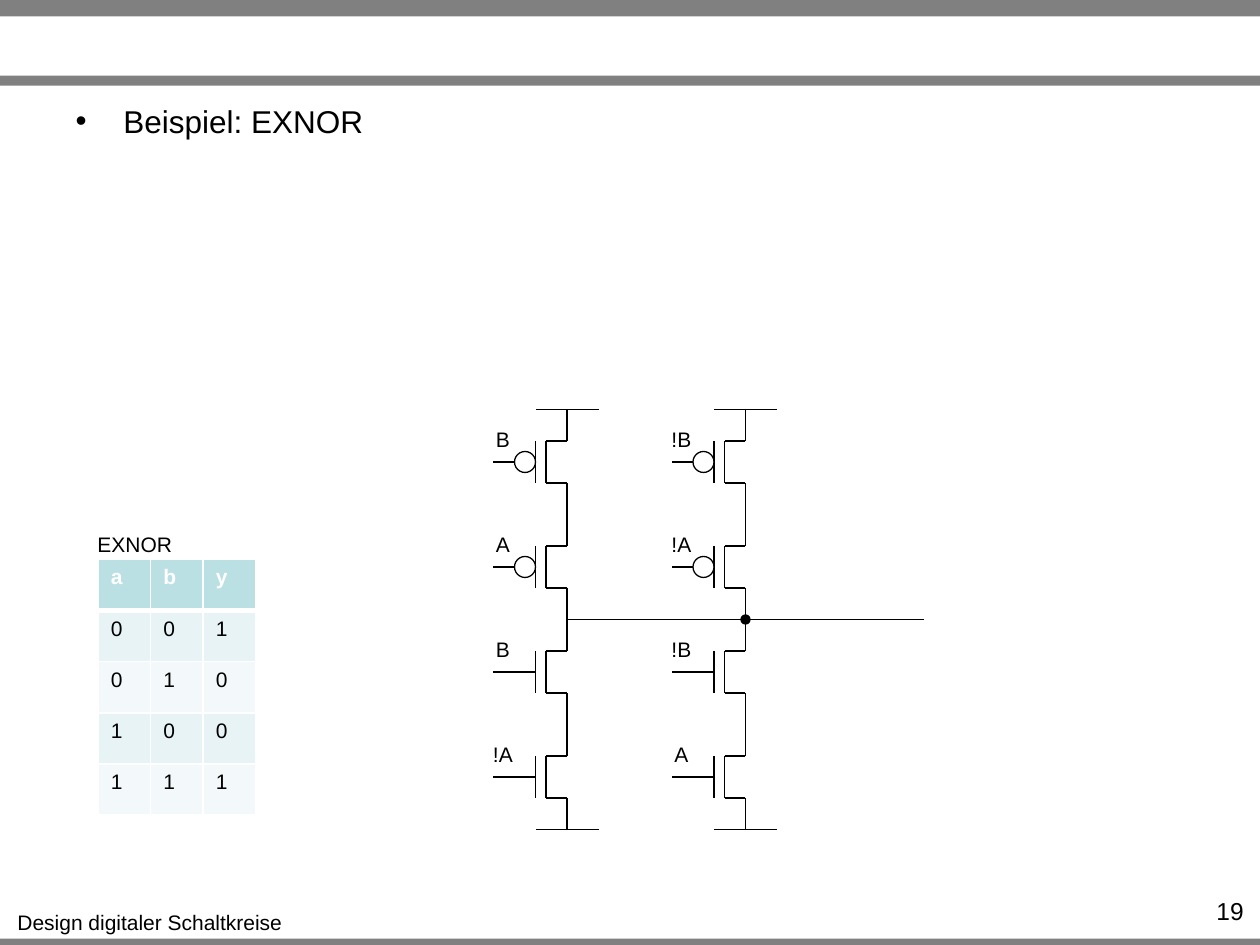
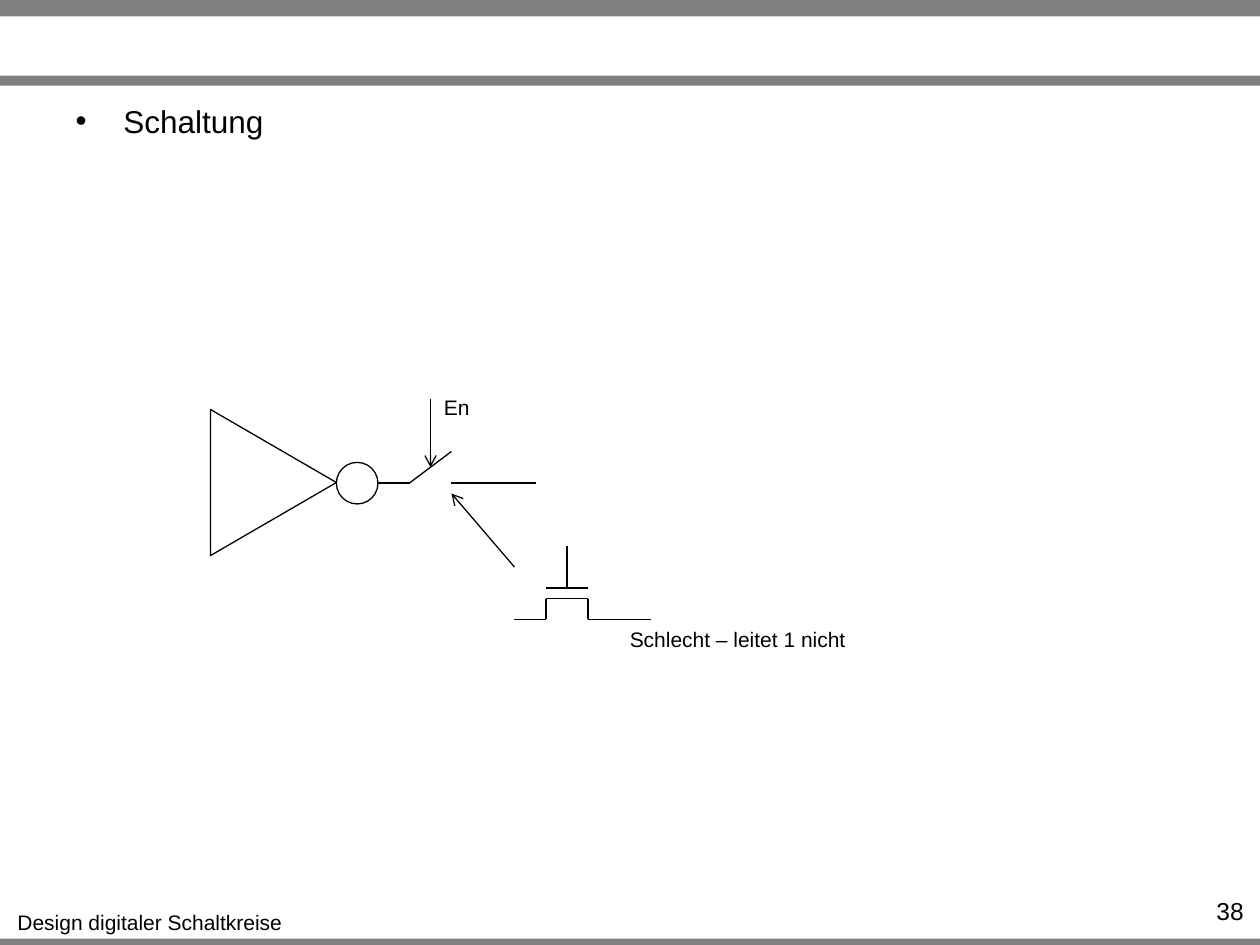
from lxml.etree import SubElement
from pptx import Presentation
from pptx.dml.color import RGBColor
from pptx.enum.shapes import MSO_CONNECTOR, MSO_SHAPE
from pptx.enum.text import MSO_ANCHOR, PP_ALIGN
from pptx.oxml.ns import qn
from pptx.util import Inches, Pt

COLOURS = {"ink": "000000", "paper": "FFFFFF", "band": "808080",
           "head": "BBE0E3", "odd": "E7F3F4", "even": "F3F9FA"}
RGB = {name: RGBColor.from_string(value) for name, value in COLOURS.items()}
BODY_FONT = {"name": "Arial", "size": Pt(18)}
NUMBER_FONT = {"name": "Arial", "size": Pt(14)}
LABEL_FONT = {"name": "Arial", "size": Pt(12)}
HEAD_FONT = {**LABEL_FONT, "bold": True}
CELL_FONT = {**LABEL_FONT, "bold": False}
GRID = 12  # circuit drawings lie on a grid of twelfths of an inch


def write_text(frame, text, font, align=PP_ALIGN.CENTER, wrap=False, colour="ink"):
    frame.word_wrap = wrap
    para = frame.paragraphs[0]
    para.alignment = align
    span = para.add_run()
    span.text = text
    for key, value in font.items():
        setattr(span.font, key, value)
    span.font.color.rgb = RGB[colour]
    return para


def draw_wire(shapes, x1, y1, x2, y2, tail=None):
    wire = shapes.add_connector(MSO_CONNECTOR.STRAIGHT,
                                *[Inches(value / GRID) for value in (x1, y1, x2, y2)])
    wire.line.color.rgb = RGB["ink"]
    wire.line.width = Pt(0.75)
    properties = wire._element.spPr
    if tail:
        SubElement(properties.find(qn("a:ln")), qn("a:tailEnd"), type=tail)
    SubElement(properties, qn("a:effectLst"))


deck = Presentation()
deck.slide_width, deck.slide_height = Inches(10), Inches(7.5)

# Shared frame: bands, footer, page number and bullet text
pages = []
for topic, number, body_height in [("Beispiel: EXNOR", "19", 1.58),
                                   ("Schaltung", "38", 0.74)]:
    page = deck.slides.add_slide(deck.slide_layouts[1])
    pages.append(page)
    page.shapes.title._element.getparent().remove(page.shapes.title._element)

    for top, height in [(7.45, 0.08), (0, 0.13), (0.6, 0.08)]:
        band = page.shapes.add_shape(MSO_SHAPE.RECTANGLE, 0, Inches(top),
                                     Inches(10), Inches(height))
        band.shadow.inherit = False
        band.fill.solid()
        band.fill.fore_color.rgb = RGB["band"]
        band.line.fill.background()

    footer = page.shapes.add_textbox(Inches(0.03), Inches(7.17), Inches(2.32), Inches(0.3))
    write_text(footer.text_frame, "Design digitaler Schaltkreise", LABEL_FONT)
    page_number = page.shapes.add_textbox(Inches(9.1), Inches(7.06),
                                          Inches(0.87), Inches(0.24))
    write_text(page_number.text_frame, number, NUMBER_FONT, PP_ALIGN.RIGHT, True)

    body = page.placeholders[1]
    body.left, body.top = Inches(0.5), Inches(0.76)
    body.width, body.height = Inches(9), Inches(body_height)
    body.text_frame.vertical_anchor = MSO_ANCHOR.TOP
    para = write_text(body.text_frame, topic, BODY_FONT, PP_ALIGN.LEFT, True)
    para.space_before = Pt(0)
    indent = para._p.get_or_add_pPr()
    indent.set("marL", str(Inches(0.38)))
    indent.set("indent", str(-Inches(0.38)))
    SubElement(indent, qn("a:buFont"), typeface="Arial")
    SubElement(indent, qn("a:buChar"), char="•")

exnor_page, switch_page = pages

# Truth table
caption = exnor_page.shapes.add_textbox(Inches(0.67), Inches(4.17), Inches(0.8), Inches(0.3))
write_text(caption.text_frame, "EXNOR", LABEL_FONT)
truth = ["aby", "001", "010", "100", "111"]
table = exnor_page.shapes.add_table(5, 3, Inches(0.78), Inches(4.44),
                                    Inches(1.25), Inches(2.03)).table
for column in table.columns:
    column.width = Inches(1.25 / 3)
for row_index, values in enumerate(truth):
    table.rows[row_index].height = Inches(2.03 / 5)
    is_head = row_index == 0
    fill = "head" if is_head else ("odd" if row_index % 2 else "even")
    for column_index, value in enumerate(values):
        cell = table.cell(row_index, column_index)
        write_text(cell.text_frame, value, HEAD_FONT if is_head else CELL_FONT,
                   PP_ALIGN.LEFT, True, "paper" if is_head else "ink")
        for side in "LRTB":
            thick = (is_head and side == "B") or (row_index == 1 and side == "T")
            edge = SubElement(cell._tc.get_or_add_tcPr(), qn(f"a:ln{side}"),
                              w=str(Pt(3 if thick else 1)))
            paint = SubElement(edge, qn("a:solidFill"))
            SubElement(paint, qn("a:srgbClr"), val=COLOURS["paper"])
        cell.fill.solid()
        cell.fill.fore_color.rgb = RGB[fill]

# Two transistor stacks: the upper two are p-type, the lower two n-type
for x, inputs in [(54, ["B", "A", "B", "!A"]), (71, ["!B", "!A", "!B", "A"])]:
    for rail_y in (39, 79):
        draw_wire(exnor_page.shapes, x + 3, rail_y, x - 3, rail_y)
    for index, name in enumerate(inputs):
        y = 44 + 10 * index
        transistor = exnor_page.shapes.add_group_shape().shapes
        for wire_ends in [(x, y - 5, x, y - 2), (x, y - 2, x - 2, y - 2),
                          (x - 2, y - 2, x - 2, y + 2), (x, y + 2, x - 2, y + 2),
                          (x, y + 2, x, y + 5), (x - 3, y - 2, x - 3, y + 2),
                          (x - 5, y, x - 3, y), (x - 5, y, x - 7, y)]:
            draw_wire(transistor, *wire_ends)
        if index < 2:
            bubble = transistor.add_shape(
                MSO_SHAPE.OVAL, Inches((x - 5) / GRID), Inches((y - 1) / GRID),
                Inches(2 / GRID), Inches(2 / GRID))
            bubble.shadow.inherit = False
            bubble.fill.solid()
            bubble.fill.fore_color.rgb = RGB["paper"]
            bubble.line.color.rgb = RGB["ink"]
            bubble.line.width = Pt(0.75)
        width = 0.31 if len(name) == 1 else 0.36
        label = exnor_page.shapes.add_textbox(Inches((x - 6.1) / GRID - width / 2),
                                              Inches((y - 4) / GRID),
                                              Inches(width), Inches(0.3))
        write_text(label.text_frame, name, LABEL_FONT)

# Output node
draw_wire(exnor_page.shapes, 54, 59, 71, 59)
draw_wire(exnor_page.shapes, 88, 59, 71, 59, "oval")

# Inverter followed by a switch
draw_wire(switch_page.shapes, 32, 46, 39, 46)
for kind, left, top, width, height, turn in [
        (MSO_SHAPE.OVAL, 2.67, 3.67, 0.33, 0.33, 0),
        (MSO_SHAPE.ISOSCELES_TRIANGLE, 1.59, 3.33, 1.16, 1, 90)]:
    symbol = switch_page.shapes.add_shape(kind, Inches(left), Inches(top),
                                          Inches(width), Inches(height))
    symbol.shadow.inherit = False
    symbol.rotation = turn
    if turn:
        symbol.fill.background()
    else:
        symbol.fill.solid()
        symbol.fill.fore_color.rgb = RGB["paper"]
    symbol.line.color.rgb = RGB["ink"]
    symbol.line.width = Pt(0.75)
draw_wire(switch_page.shapes, 41, 38, 41, 44.5, "arrow")
draw_wire(switch_page.shapes, 39, 46, 43, 43)
draw_wire(switch_page.shapes, 43, 46, 51, 46)

# Pass transistor that stands for the switch
pass_transistor = switch_page.shapes.add_group_shape().shapes
for wire_ends in [(52, 59, 52, 57), (52, 57, 56, 57), (54, 54, 54, 56),
                  (52, 56, 56, 56), (56, 59, 56, 57), (56, 59, 59, 59),
                  (49, 59, 52, 59), (54, 54, 54, 52)]:
    draw_wire(pass_transistor, *wire_ends)
draw_wire(switch_page.shapes, 62, 59, 59, 59)
draw_wire(switch_page.shapes, 49, 54, 43, 47, "arrow")

for text, left, top, width in [("En", 3.42, 3.08, 0.41),
                               ("Schlecht – leitet 1 nicht", 4.89, 4.92, 1.93)]:
    label = switch_page.shapes.add_textbox(Inches(left), Inches(top),
                                           Inches(width), Inches(0.3))
    write_text(label.text_frame, text, LABEL_FONT)

deck.save("out.pptx")
